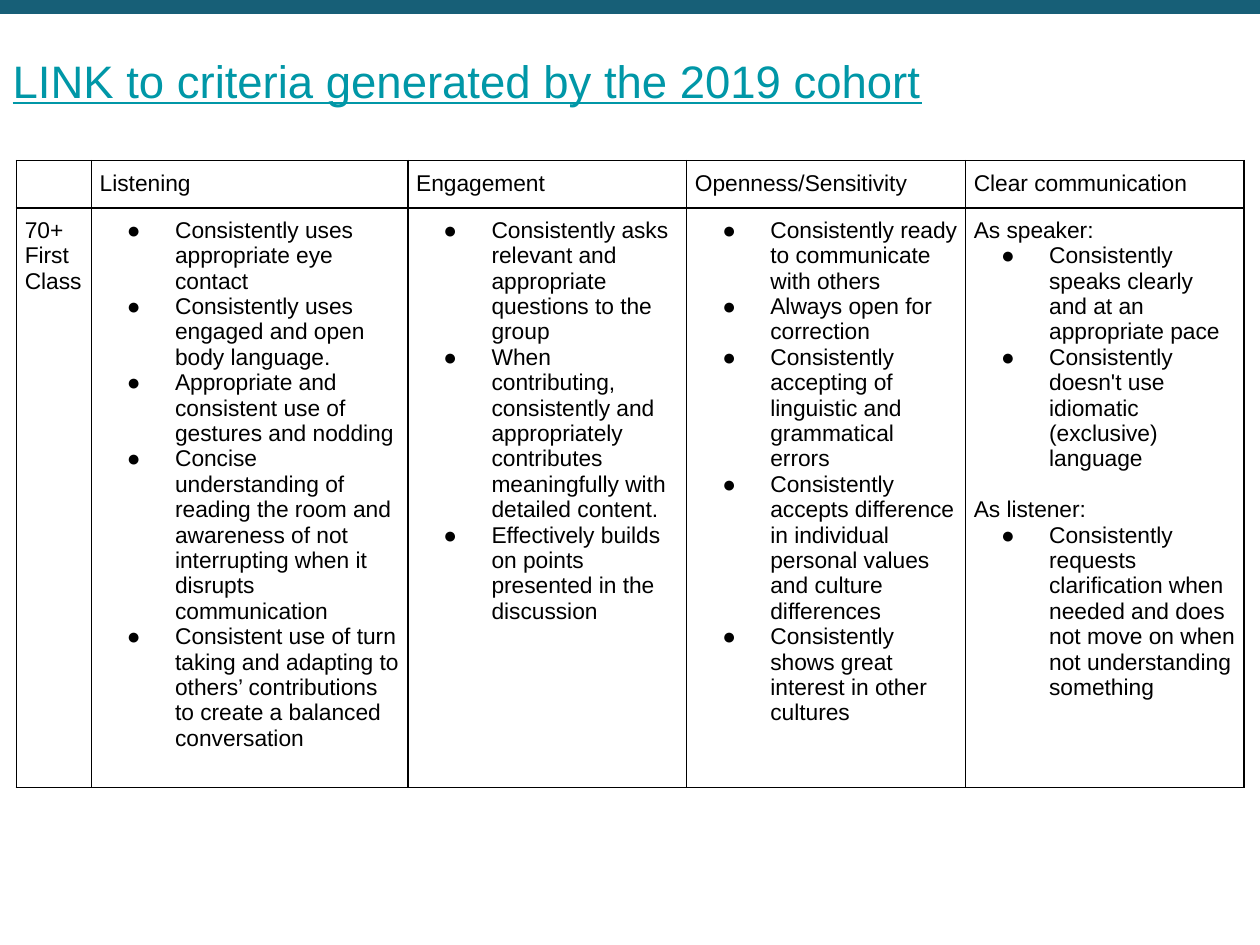
from lxml.etree import SubElement
from pptx import Presentation
from pptx.dml.color import RGBColor
from pptx.enum.text import MSO_ANCHOR, MSO_AUTO_SIZE, PP_ALIGN
from pptx.enum.shapes import MSO_CONNECTOR
from pptx.oxml import parse_xml
from pptx.oxml.ns import nsdecls, qn
from pptx.util import Cm, Pt

COLORS = {"bar": "175F77", "link": "0097A7", "ink": "000000"}
FONT = "Arial"
COLUMN_WIDTHS = [1.51, 6.38, 5.62, 5.62, 5.62]
ROW_HEIGHTS = [0.95, 11.69]
BULLET = "● "
HEADERS = ["", "Listening", "Engagement", "Openness/Sensitivity", "Clear communication"]
FIRST_CLASS = [
    ["70+", "First Class"],
    [
        "● Consistently uses appropriate eye contact",
        "● Consistently uses engaged and open body language.",
        "● Appropriate and consistent use of gestures and nodding",
        "● Concise understanding of reading the room and awareness of not "
        "interrupting when it disrupts communication",
        "● Consistent use of turn taking and adapting to others’ contributions "
        "to create a balanced conversation",
    ],
    [
        "● Consistently asks relevant and appropriate questions to the group",
        "● When contributing, consistently and appropriately contributes "
        "meaningfully with detailed content.",
        "● Effectively builds on points presented in the discussion",
    ],
    [
        "● Consistently ready to communicate with others",
        "● Always open for correction",
        "● Consistently accepting of linguistic and grammatical errors",
        "● Consistently accepts difference in individual personal values "
        "and culture differences",
        "● Consistently shows great interest in other cultures",
    ],
    [
        "As speaker:",
        "● Consistently speaks clearly and at an appropriate pace",
        "● Consistently doesn't use idiomatic (exclusive) language",
        "As listener:",
        "● Consistently requests clarification when needed and does not move on "
        "when not understanding something",
    ],
]


def set_font(paragraph, size, color):
    """Give a paragraph its typeface, size and colour."""
    paragraph.font.name = FONT
    paragraph.font.size = Pt(size)
    paragraph.font.color.rgb = RGBColor.from_string(COLORS[color])


def add_top_bar(slide, left, top, width):
    """Draw the thick line along the top edge."""
    bar = slide.shapes.add_connector(
        MSO_CONNECTOR.STRAIGHT, Cm(left), Cm(top), Cm(left + width), Cm(top))
    bar.line.color.rgb = RGBColor.from_string(COLORS["bar"])
    bar.line.width = Pt(9)
    SubElement(bar._element.spPr, qn("a:effectLst"))


def place_title(slide, text, left, top, width, height):
    """Move and format the title placeholder."""
    title = slide.shapes.title
    title.left, title.top, title.width, title.height = map(Cm, (left, top, width, height))
    frame = title.text_frame
    frame.text = text
    frame.word_wrap = True
    frame.auto_size = MSO_AUTO_SIZE.NONE
    frame.vertical_anchor = MSO_ANCHOR.MIDDLE
    paragraph = frame.paragraphs[0]
    paragraph.alignment = PP_ALIGN.LEFT
    set_font(paragraph, 26, "link")
    paragraph.font.underline = True


def add_bullet(paragraph):
    """Turn a paragraph into a hanging bullet item."""
    properties = paragraph._p.get_or_add_pPr()
    properties.set("marL", str(Cm(1.52)))
    properties.set("indent", str(-Cm(0.97)))
    color = SubElement(properties, qn("a:buClr"))
    SubElement(color, qn("a:srgbClr"), val=COLORS["ink"])
    SubElement(properties, qn("a:buFont"), typeface=FONT)
    SubElement(properties, qn("a:buChar"), char=BULLET.strip())


def add_borders(cell):
    """Outline a cell with thin lines on all four sides."""
    properties = cell._tc.get_or_add_tcPr()
    for position, side in enumerate("LRTB"):
        properties.insert(position, parse_xml(
            f'<a:ln{side} {nsdecls("a")} w="{Pt(1)}"><a:solidFill>'
            f'<a:srgbClr val="{COLORS["ink"]}"/></a:solidFill></a:ln{side}>'))


def fill_cell(cell, lines):
    """Write plain and bulleted lines into a bordered cell."""
    cell.fill.background()
    add_borders(cell)
    cell.margin_left = cell.margin_right = Cm(0.17)
    cell.margin_top = cell.margin_bottom = Cm(0.2)
    cell.text = "\n".join(line.removeprefix(BULLET) for line in lines)
    previous_bulleted = False
    for line, paragraph in zip(lines, cell.text_frame.paragraphs):
        bulleted = line.startswith(BULLET)
        if bulleted:
            add_bullet(paragraph)
        elif previous_bulleted:
            paragraph.space_before = Pt(14.5)
        set_font(paragraph, 13, "ink")
        previous_bulleted = bulleted


def add_criteria_table(slide, left, top):
    """Build the table of criteria for the top grade."""
    shape = slide.shapes.add_table(
        len(ROW_HEIGHTS), len(COLUMN_WIDTHS), Cm(left), Cm(top),
        Cm(sum(COLUMN_WIDTHS)), Cm(sum(ROW_HEIGHTS)))
    table = shape.table
    table.first_row = table.horz_banding = False
    for column, width in zip(table.columns, COLUMN_WIDTHS):
        column.width = Cm(width)
    contents = [[[header] for header in HEADERS], FIRST_CLASS]
    for row, height, row_lines in zip(table.rows, ROW_HEIGHTS, contents):
        row.height = Cm(height)
        for cell, lines in zip(row.cells, row_lines):
            fill_cell(cell, lines)


def main():
    """Build and save the presentation."""
    presentation = Presentation()
    presentation.slide_width, presentation.slide_height = Cm(25.4), Cm(19.05)
    slide = presentation.slides.add_slide(presentation.slide_layouts[5])
    add_top_bar(slide, -0.08, 0.13, 25.56)
    add_criteria_table(slide, 0.33, 3.24)
    place_title(slide, "LINK to criteria generated by the 2019 cohort", 0, 0.8, 22.05, 1.63)
    presentation.save("out.pptx")


if __name__ == "__main__":
    main()
